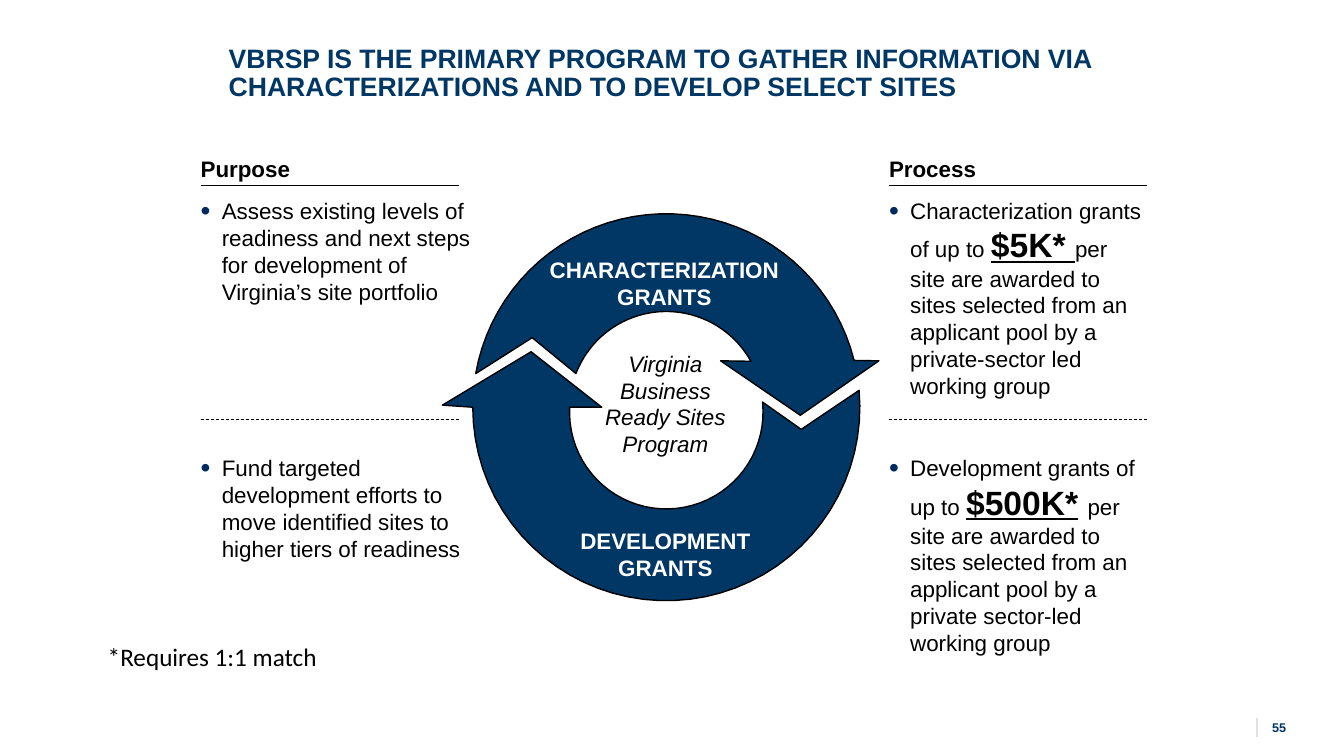
from math import cos, sin, radians
from lxml import etree
from pptx import Presentation, util as u
from pptx.dml.color import RGBColor
from pptx.enum import dml, shapes, text
from pptx.oxml.ns import qn

theme = {
    "navy": "003765", "title": "003764", "dot": "002960", "ink": "000000",
    "white": "FFFFFF", "tick": "E1E1E1", "sans": "Arial", "note": "Calibri",
    "head": 19, "body": 16, "big": 24, "foot": 18, "page": 9,
}
hue = {k: RGBColor.from_string(theme[k])
       for k in ("navy", "title", "dot", "ink", "white", "tick")}

deck = Presentation()
deck.slide_width, deck.slide_height = u.Inches(13.33), u.Inches(7.5)
slide = deck.slides.add_slide(deck.slide_layouts[6])

# Grid of 100 columns by 100 rows
col, row = deck.slide_width / 100, deck.slide_height / 100


def write(box, paras, size="body", ink="ink", face="sans", pad=(0, 0),
          align="LEFT", anchor="TOP", gap=1.0, dot=False, **style):
    """Add a text box; each paragraph is a list of (words, format) runs."""
    x, y, w, h = box
    area = slide.shapes.add_textbox(int(x * col), int(y * row),
                                    int(w * col), int(h * row))
    frame = area.text_frame
    side, edge = (u.Inches(p) for p in pad)
    look = {"word_wrap": True, "margin_left": side, "margin_right": side,
            "margin_top": edge, "margin_bottom": edge,
            "vertical_anchor": getattr(text.MSO_ANCHOR, anchor)}
    for key, val in look.items():
        setattr(frame, key, val)
    for n, runs in enumerate(paras):
        para = frame.add_paragraph() if n else frame.paragraphs[0]
        para.alignment = getattr(text.PP_ALIGN, align)
        para.line_spacing = gap
        if dot:
            props = para._p.get_or_add_pPr()
            props.set("marL", str(u.Inches(0.21)))
            props.set("indent", str(-u.Inches(0.21)))
            tint = etree.SubElement(props, qn("a:buClr"))
            etree.SubElement(tint, qn("a:srgbClr"), val=theme["dot"])
            etree.SubElement(props, qn("a:buSzPct"), val="125000")
            etree.SubElement(props, qn("a:buFont"), typeface=theme["sans"])
            etree.SubElement(props, qn("a:buChar"), char="•")
        for words, extra in runs:
            run = para.add_run()
            run.text = words
            run.font.color.rgb = hue[ink]
            form = {"name": theme[face], "size": u.Pt(theme[size]), **style, **extra}
            for key, val in form.items():
                setattr(run.font, key, val)


def arc(mid, span, start, end, steps=40):
    """Points on a circle, angles in degrees counterclockwise from the right."""
    turns = [radians(start + (end - start) * n / steps) for n in range(steps + 1)]
    return [(49.58 + span * cos(t), mid - span * sin(t) * col / row) for t in turns]


# Title
write((16.28, 5.33, 66.22, 8.93),
      [[("VBRSP IS THE PRIMARY PROGRAM TO GATHER INFORMATION VIA "
         "CHARACTERIZATIONS AND TO DEVELOP SELECT SITES", {})]],
      size="head", ink="title", pad=(0.1, 0.05), gap=0.9, bold=True)

# Cycle of two arrows
outer, inner = 14.4, 7.2
top = (arc(53.87, outer, 14, 170) + [(39.6, 44.67)] + arc(54, inner, 159, 29)
       + [(53.62, 47.73), (59.55, 54.93), (65.4, 47.73)])
low = (arc(54.53, inner, 6, -183) + [(44.78, 53.87), (39.52, 46.53), (32.92, 53.6)]
       + arc(53.87, outer, 180, 365) + [(59.62, 56.8)])
for pts in (top, low):
    spots = [(int(x * col), int(y * row)) for x, y in pts]
    pen = slide.shapes.build_freeform(*spots[0])
    pen.add_line_segments(spots[1:], close=True)
    arrow = pen.convert_to_shape()
    arrow.shadow.inherit = False
    arrow.fill.solid()
    arrow.fill.fore_color.rgb = hue["navy"]
    arrow.line.color.rgb = hue["ink"]
    arrow.line.width = u.Pt(1)

# Cycle labels
for box, lines in (
    ((40.58, 33.87, 17.7, 7.2), ["CHARACTERIZATION GRANTS"]),
    ((42.68, 69.73, 13.65, 7.2), ["DEVELOPMENT", "GRANTS"]),
):
    write(box, [[(words, {})] for words in lines], ink="white",
          align="CENTER", anchor="MIDDLE", bold=True)
write((43.88, 46.27, 11.25, 14.4), [[("Virginia Business Ready Sites Program", {})]],
      align="CENTER", italic=True)

# Side columns: heading, then one bullet for each half of the cycle
big = {"size": u.Pt(theme["big"]), "bold": True, "underline": True}
sides = [
    (14.93, 20.7, "Purpose", [
        [("Assess existing levels of readiness and next steps for development "
          "of Virginia’s site portfolio", {})],
        [("Fund targeted development efforts to move identified sites to "
          "higher tiers of readiness", {})]]),
    (66.15, 19.2, "Process", [
        [("Characterization grants of up to ", {}), ("$5K* ", big),
         ("per site are awarded to sites selected from an applicant pool by a "
          "private-sector led working group", {})],
        [("Development grants of up to ", {}), ("$500K*", big),
         (" ", {"size": u.Pt(theme["big"])}),
         ("per site are awarded to sites selected from an applicant pool by a "
          "private sector-led working group", {})]]),
]
rules = [(93.53, 94.93, 93.53, 97.47, "tick", 1.5, False)]
for x, wide, head, items in sides:
    write((x, 20.53, 20.7, 3.6), [[(head, {})]], bold=True)
    for y, runs in zip((26.13, 60.13), items):
        write((x, y, wide, 26.93), [runs], dot=True)
    for y, dash in ((24.53, False), (55.47, True)):
        rules.append((x, y, x + 19.2, y, "ink", 0.5, dash))

# Rules and page tick
for x1, y1, x2, y2, ink, thick, dash in rules:
    rule = slide.shapes.add_connector(
        shapes.MSO_CONNECTOR.STRAIGHT,
        int(x1 * col), int(y1 * row), int(x2 * col), int(y2 * row))
    etree.SubElement(rule._element.spPr, qn("a:effectLst"))
    rule.line.color.rgb = hue[ink]
    rule.line.width = u.Pt(thick)
    if dash:
        rule.line.dash_style = dml.MSO_LINE.DASH

# Footnote and page number
write((7.28, 84.13, 35.4, 5.33), [[("*Requires 1:1 match", {})]],
      size="foot", face="note", pad=(0.1, 0.05))
write((94.65, 94.53, 5.03, 3.33), [[("55", {})]],
      size="page", ink="navy", pad=(0, 0.05), bold=True)

deck.save("out.pptx")
